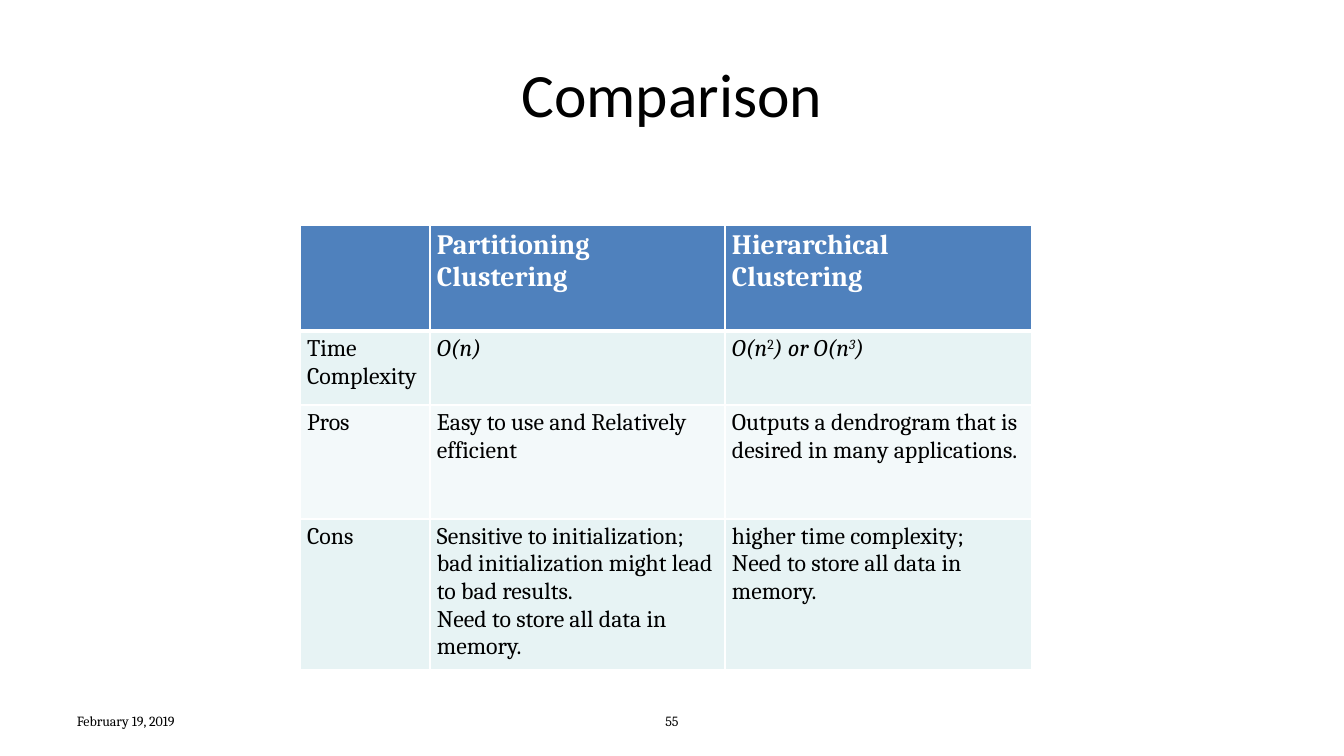
"""Build a slide comparing partitioning and hierarchical clustering."""
from lxml import etree
from pptx import Presentation
from pptx import util as u
from pptx.dml.color import RGBColor
from pptx.enum import text
from pptx.oxml import ns

PX = 914400 / 100.8
BLACK = RGBColor(0x00, 0x00, 0x00)
WHITE = RGBColor(0xFF, 0xFF, 0xFF)
BLUE = RGBColor(0x4F, 0x81, 0xBD)
BAND_DARK = RGBColor(0xE7, 0xF3, 0xF4)
BAND_LIGHT = RGBColor(0xF3, 0xF9, 0xFA)
LEFT, CENTER = text.PP_ALIGN.LEFT, text.PP_ALIGN.CENTER


def px(*lengths):
    return [u.Emu(round(n * PX)) for n in lengths]


def add_run(p, words, color=BLACK, **formats):
    r = p.add_run()
    r.text = words
    r.font.color.rgb = color
    for name, value in formats.items():
        setattr(r.font, name, value)
    return r


prs = Presentation()
prs.slide_width, prs.slide_height = px(1344, 756)
s = prs.slides.add_slide(prs.slide_layouts[5])

title = s.shapes.title
title.left, title.top, title.width, title.height = px(67, 30, 1210, 126)
title.text_frame.vertical_anchor = text.MSO_ANCHOR.MIDDLE
p = title.text_frame.paragraphs[0]
p.alignment = CENTER
add_run(p, "Comparison", name="Calibri", size=u.Pt(44))

FOOTERS = [("February 19, 2019", 67, 314, LEFT), ("55", 512, 320, CENTER)]
for words, left, width, align in FOOTERS:
    tf = s.shapes.add_textbox(*px(left, 701, width, 40)).text_frame
    tf.word_wrap = True
    tf.vertical_anchor = text.MSO_ANCHOR.MIDDLE
    p = tf.paragraphs[0]
    p.alignment = align
    add_run(p, words, name="Cambria", size=u.Pt(10))

MEMORY = "Need to store all data in memory."
ROWS = [
    [[], ["Partitioning", "Clustering"], ["Hierarchical", "Clustering"]],
    [["Time Complexity"], ["O(n)"], ["O(n|2|) or O(n|3|)"]],
    [["Pros"], ["Easy to use and Relatively efficient"],
     ["Outputs a dendrogram that is desired in many applications."]],
    [["Cons"],
     ["Sensitive to initialization; bad initialization might lead to bad results.", MEMORY],
     ["higher time complexity;", MEMORY]],
]
WIDTHS = [130, 295, 307]
HEIGHTS = [106, 74, 114, 150]
FILLS = [BLUE, BAND_DARK, BAND_LIGHT, BAND_DARK]

table = s.shapes.add_table(len(ROWS), len(WIDTHS),
                           *px(300, 225, sum(WIDTHS), sum(HEIGHTS))).table
for column, width in zip(table.columns, px(*WIDTHS)):
    column.width = width
for row, height in zip(table.rows, px(*HEIGHTS)):
    row.height = height

for i, row in enumerate(ROWS):
    for j, lines in enumerate(row):
        cell = table.cell(i, j)
        cell.margin_left, cell.margin_right, cell.margin_top, cell.margin_bottom = px(7, 7, 4, 4)
        tcPr = cell._tc.get_or_add_tcPr()
        for side in "LRTB":
            thick = (i, side) in [(0, "B"), (1, "T")]
            ln = etree.SubElement(tcPr, ns.qn(f"a:ln{side}"), w=str(u.Pt(3 if thick else 1)))
            fill = etree.SubElement(ln, ns.qn("a:solidFill"))
            etree.SubElement(fill, ns.qn("a:srgbClr"), val=str(WHITE))
        cell.fill.solid()
        cell.fill.fore_color.rgb = FILLS[i]

        for k, line in enumerate(lines):
            tf = cell.text_frame
            p = tf.add_paragraph() if k else tf.paragraphs[0]
            for n, part in enumerate(line.split("|")):
                r = add_run(p, part, WHITE if i == 0 else BLACK, name="Cambria",
                            size=u.Pt(20 if i == 0 else 17), bold=i == 0,
                            italic=i == 1 and j > 0 and part != "2")
                if n % 2:
                    r.font._element.set("baseline", "30000")

prs.save("out.pptx")
